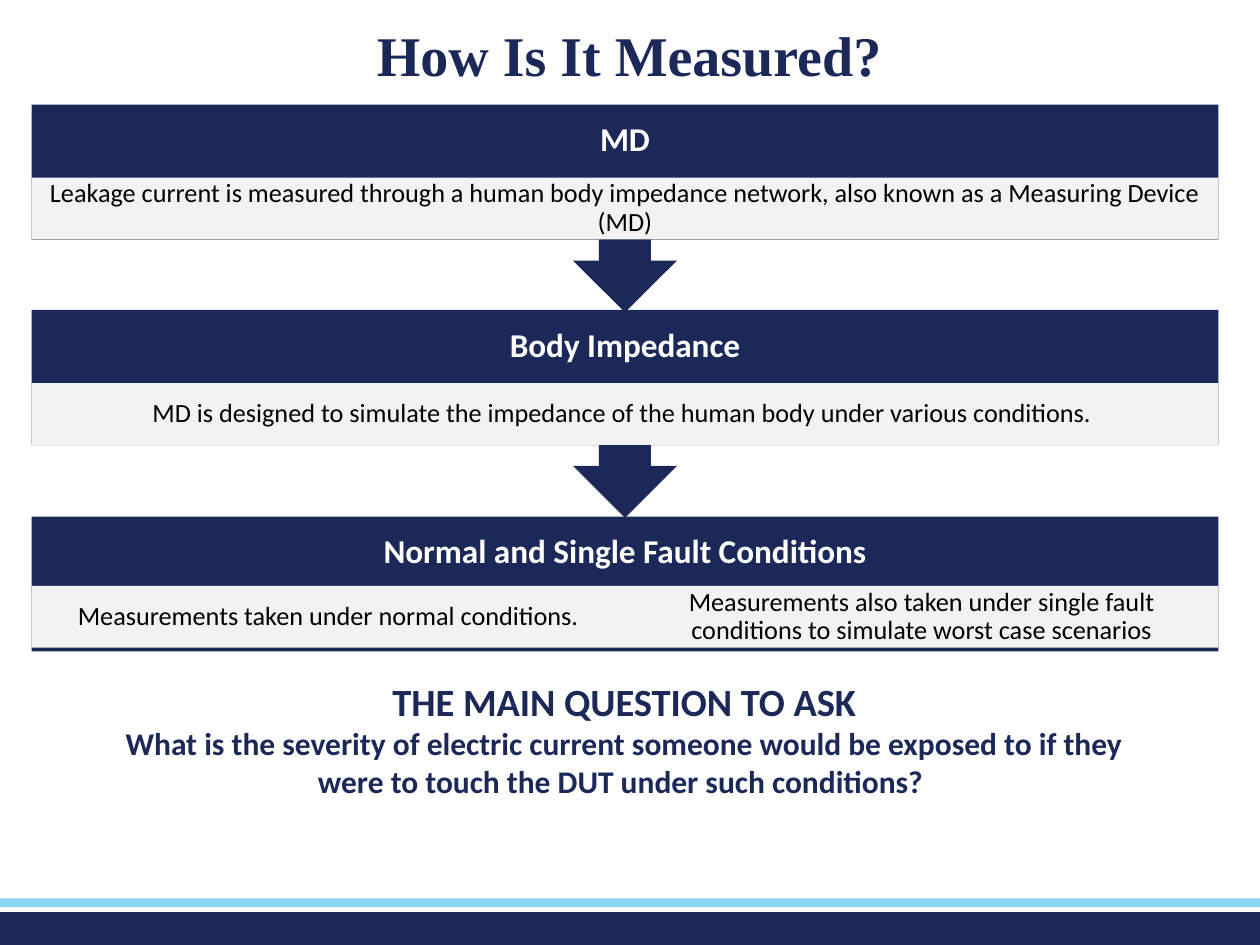
from pptx import Presentation
from pptx.dml.color import RGBColor
from pptx.enum.shapes import MSO_SHAPE
from pptx.enum.text import MSO_ANCHOR, PP_ALIGN
from pptx.util import Inches, Pt

COLORS = {
    "navy": "1C2958",
    "footer": "1C2A58",
    "sky": "88D6F4",
    "panel": "F2F2F2",
    "white": "FFFFFF",
    "black": "000000",
}
LEFT, WIDTH = 0.25, 9.42
HEADER_H, DETAIL_H = 0.58, 0.49
STEPS = [
    (4.1, 4.65, "Normal and Single Fault Conditions",
     ["Measurements taken under normal conditions.",
      "Measurements also taken under single fault conditions to simulate worst case scenarios"]),
    (2.46, 3.04, "Body Impedance",
     ["MD is designed to simulate the impedance of the human body under various conditions. "]),
    (0.83, 1.41, "MD",
     ["Leakage current is measured through a human body impedance network, "
      "also known as a Measuring Device (MD)"]),
]


class Deck:
    def __init__(self, width, height):
        self.prs = Presentation()
        self.prs.slide_width = Inches(width)
        self.prs.slide_height = Inches(height)
        self.font = "Calibri"
        self.s = self.prs.slides.add_slide(self.prs.slide_layouts[6])

    def shape(self, box, color, kind=MSO_SHAPE.RECTANGLE, rotation=0):
        sp = self.s.shapes.add_shape(kind, *map(Inches, box))
        sp.shadow.inherit = False
        sp.fill.solid()
        sp.fill.fore_color.rgb = RGBColor.from_string(COLORS[color])
        sp.line.fill.background()
        sp.rotation = rotation
        return sp

    def fill_text(self, sp, lines, color, bold=False, font=None, spacing=0.9,
                  insets=(0.1, 0.05), anchor=MSO_ANCHOR.MIDDLE):
        tf = sp.text_frame
        tf.word_wrap = True
        tf.vertical_anchor = anchor
        tf.margin_left = tf.margin_right = Inches(insets[0])
        tf.margin_top = tf.margin_bottom = Inches(insets[1])
        p = tf.paragraphs[0]
        p.alignment = PP_ALIGN.CENTER
        p.line_spacing = spacing
        for i, (text, size) in enumerate(lines):
            if i:
                p.add_line_break()
            r = p.add_run()
            r.text = text
            r.font.name = font or self.font
            r.font.size = Pt(size)
            r.font.bold = bold
            r.font.color.rgb = RGBColor.from_string(COLORS[color])

    def text(self, box, lines, color, **style):
        sp = self.s.shapes.add_textbox(*map(Inches, box))
        self.fill_text(sp, lines, color, **style)

    def step(self, top, detail_top, header, details, arrow):
        if arrow:
            self.shape((LEFT, top, WIDTH, 1.65), "navy", MSO_SHAPE.UP_ARROW_CALLOUT, 180)
        else:
            self.shape((LEFT, top, WIDTH, 1.07), "navy")
        self.text((LEFT, top, WIDTH, HEADER_H), [(header, 19)], "white",
                  bold=True, insets=(0.15, 0.15))
        width = WIDTH / len(details)
        for i, detail in enumerate(details):
            sp = self.shape((LEFT + i * width, detail_top, width, DETAIL_H), "panel")
            self.fill_text(sp, [(detail, 15)], "black", insets=(0.12, 0.02))


def main():
    deck = Deck(10, 7.5)
    deck.shape((0, 7.24, 10, 0.26), "footer")
    deck.shape((0, 7.13, 10, 0.07), "sky")
    deck.text((0.62, 5.33, 8.67, 1.08),
              [("THE MAIN QUESTION TO ASK", 22),
               ("What is the severity of electric current someone would be exposed to "
                "if they were to touch the DUT under such conditions? ", 18)],
              "navy", bold=True, spacing=1.0, anchor=MSO_ANCHOR.TOP)
    for i, step in enumerate(STEPS):
        deck.step(*step, arrow=i > 0)
    deck.text((0.83, 0.18, 8.33, 0.57), [("How Is It Measured?", 32)], "navy",
              bold=True, font="Times New Roman")
    deck.prs.save("out.pptx")


if __name__ == "__main__":
    main()
